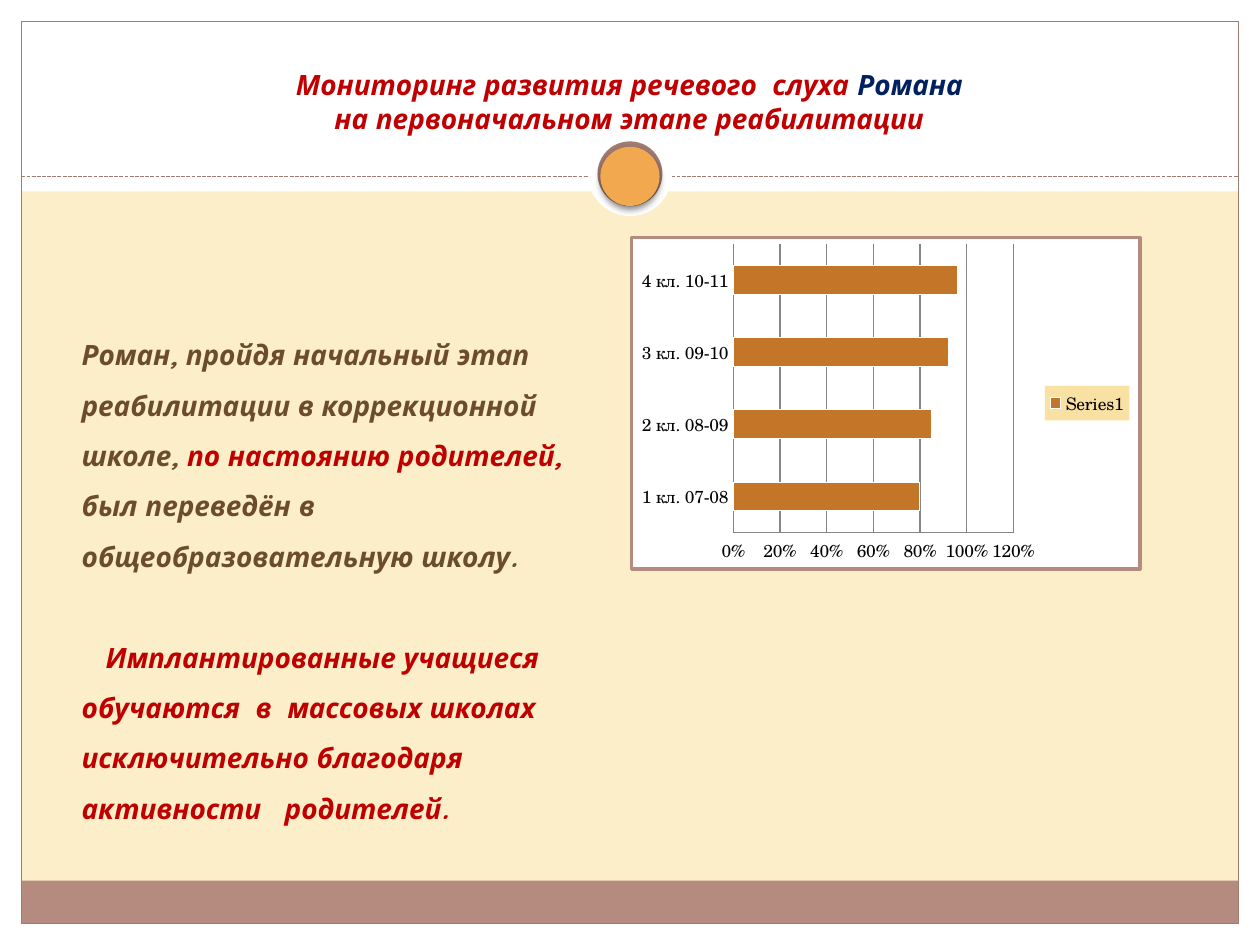
from lxml import etree
from pptx import Presentation, util as u
from pptx.chart.data import CategoryChartData
from pptx.dml.color import RGBColor
from pptx.enum import chart as charts, dml, shapes, text
from pptx.oxml import parse_xml
from pptx.oxml.ns import nsdecls, qn

WIDTH, HEIGHT, MARGIN = 10, 7.5, 0.17
FOOTER_TOP = 6.99
CENTRE = WIDTH / 2
WHITE = RGBColor(0xFF, 0xFF, 0xFF)
CREAM = RGBColor(0xFB, 0xEE, 0xC9)
ROSE = RGBColor(0xB5, 0x8B, 0x80)
MAUVE = RGBColor(0xA0, 0x7B, 0x71)
ORANGE = RGBColor(0xF1, 0xA8, 0x4F)
RUST = RGBColor(0xC3, 0x76, 0x28)
SAND = RGBColor(0xF9, 0xE1, 0xA3)
GREY = RGBColor(0x86, 0x86, 0x86)
BLACK = RGBColor(0, 0, 0)
RED = RGBColor(0xC0, 0, 0)
NAVY = RGBColor(0, 0x20, 0x60)
BROWN = RGBColor(0x6C, 0x4C, 0x2C)
SERIES_NAME = "Series1"
SCORES = {"1 кл. 07-08": 0.8, "2 кл. 08-09": 0.85, "3 кл. 09-10": 0.92, "4 кл. 10-11": 0.96}


def inches(*lengths):
    """Turn plain numbers into slide lengths."""
    return [u.Inches(length) for length in lengths]


def add_block(page, kind, area, fill=None, line=None, weight=0.75):
    """Draw a preset shape without shadow."""
    block = page.shapes.add_shape(kind, *inches(*area))
    block.shadow.inherit = False
    if fill is None:
        block.fill.background()
    else:
        block.fill.solid()
        block.fill.fore_color.rgb = fill
    if line is None:
        block.line.fill.background()
    else:
        block.line.color.rgb = line
        block.line.width = u.Pt(weight)
    return block


def add_circle(page, middle, size, **style):
    """Draw a circle on the vertical centre line of the slide."""
    area = (CENTRE - size / 2, middle - size / 2, size, size)
    return add_block(page, shapes.MSO_SHAPE.OVAL, area, **style)


def add_divider(page, height):
    """Draw the dashed line below the title."""
    line = page.shapes.add_connector(
        shapes.MSO_CONNECTOR.STRAIGHT, *inches(MARGIN, height, WIDTH - MARGIN, height))
    line.line.color.rgb = MAUVE
    line.line.width = u.Pt(0.75)
    line.line.dash_style = dml.MSO_LINE.SQUARE_DOT
    etree.SubElement(line._element.spPr, qn("a:effectLst"))


def add_shadow(shape):
    """Give a shape a soft shadow straight below it."""
    effects = shape._element.spPr.find(qn("a:effectLst"))
    effects.append(parse_xml(
        f'<a:outerShdw {nsdecls("a")} blurRad="{u.Pt(4)}" dist="{u.Pt(2)}" dir="5400000">'
        '<a:srgbClr val="000000"><a:alpha val="45000"/></a:srgbClr></a:outerShdw>'))


def add_text(page, area, paragraphs, align=text.PP_ALIGN.LEFT,
             anchor=text.MSO_ANCHOR.TOP, spacing=1.0, gap=0, indent=0):
    """Write coloured spans; gap and indent apply after the first paragraph."""
    box = page.shapes.add_textbox(*inches(*area))
    frame = box.text_frame
    frame.word_wrap = True
    frame.vertical_anchor = anchor
    for number, spans in enumerate(paragraphs):
        para = frame.add_paragraph() if number else frame.paragraphs[0]
        para.alignment = align
        para.line_spacing = spacing
        if number:
            para.space_before = u.Pt(gap)
            para._p.get_or_add_pPr().set("indent", str(u.Inches(indent)))
        for words, colour in spans:
            span = para.add_run()
            span.text = words
            span.font.name = "Quicksand"
            span.font.size = u.Pt(16)
            span.font.bold = span.font.italic = True
            span.font.color.rgb = colour
    return box


def add_scores_chart(page, area):
    """Plot the hearing scores by school year."""
    data = CategoryChartData(number_format="0%")
    data.categories = list(SCORES)
    data.add_series(SERIES_NAME, list(SCORES.values()))
    chart = page.shapes.add_chart(
        charts.XL_CHART_TYPE.BAR_STACKED, *inches(*area), data).chart
    chart.has_title = False
    chart.font.name = "TeX Gyre Schola"
    chart.font.size = u.Pt(10)
    chart.font.color.rgb = BLACK
    plot = chart.plots[0]
    plot.gap_width, plot.overlap = 150, 100
    plot.vary_by_categories = False
    bars = plot.series[0].format
    bars.fill.solid()
    bars.fill.fore_color.rgb = RUST
    bars.line.color.rgb = WHITE
    values = chart.value_axis
    values.minimum_scale, values.maximum_scale, values.major_unit = 0, 1.2, 0.2
    values.tick_labels.number_format = "0%"
    values.tick_labels.number_format_is_linked = False
    values.major_gridlines.format.line.color.rgb = GREY
    for axis in (values, chart.category_axis):
        axis.major_tick_mark = charts.XL_TICK_MARK.NONE
        axis.format.line.color.rgb = GREY
    chart.has_legend = True
    chart.legend.position = charts.XL_LEGEND_POSITION.RIGHT
    chart.legend.include_in_layout = False
    chart.legend._element.get_or_add_txPr().addprevious(parse_xml(
        f'<c:spPr {nsdecls("c", "a")}><a:solidFill><a:srgbClr val="{SAND}"/></a:solidFill></c:spPr>'))
    chart._chartSpace.chart.addnext(parse_xml(
        f'<c:spPr {nsdecls("c", "a")}><a:solidFill><a:srgbClr val="{WHITE}"/></a:solidFill>'
        f'<a:ln w="{u.Pt(2)}"><a:solidFill><a:srgbClr val="{ROSE}"/></a:solidFill></a:ln></c:spPr>'))


def add_backdrop(page):
    """Draw the white margins, footer band, frame and divider."""
    page.background.fill.solid()
    page.background.fill.fore_color.rgb = CREAM
    bottom, right = HEIGHT - MARGIN, WIDTH - MARGIN
    inner = WIDTH - 2 * MARGIN
    rectangle = shapes.MSO_SHAPE.RECTANGLE
    for area in ((0, bottom, WIDTH, MARGIN), (0, 0, WIDTH, 1.52),
                 (0, 0, MARGIN, HEIGHT), (right, 0, MARGIN, HEIGHT)):
        add_block(page, rectangle, area, fill=WHITE)
    add_block(page, rectangle, (MARGIN, FOOTER_TOP, inner, bottom - FOOTER_TOP), fill=ROSE)
    add_block(page, rectangle, (MARGIN, MARGIN, inner, HEIGHT - 2 * MARGIN), line=MAUVE)
    add_divider(page, 1.4)
    add_circle(page, 1.38, 0.67, fill=WHITE)
    add_circle(page, 1.38, 0.46, fill=WHITE, line=MAUVE, weight=4)


def main():
    """Build the slide and save it."""
    deck = Presentation()
    deck.slide_width, deck.slide_height = inches(WIDTH, HEIGHT)
    page = deck.slides.add_slide(deck.slide_layouts[6])
    add_backdrop(page)
    add_text(page, (0.33, 0, 9.33, 1.12), [
        [("Мониторинг развития речевого  слуха ", RED), ("Романа", NAVY)],
        [("на первоначальном этапе реабилитации", RED)],
    ], align=text.PP_ALIGN.CENTER, anchor=text.MSO_ANCHOR.BOTTOM)
    add_scores_chart(page, (5, 1.87, 4.06, 2.66))
    add_shadow(add_circle(page, 1.4, 0.47, fill=ORANGE))
    add_text(page, (0.55, 2.5, 4.14, 4.41), [
        [("Роман, пройдя начальный этап реабилитации в коррекционной школе, ", BROWN),
         ("по настоянию родителей,", RED),
         (" был переведён в общеобразовательную школу.", BROWN)],
        [("Имплантированные учащиеся обучаются  в  массовых школах исключительно "
          "благодаря  активности   родителей.", RED)],
    ], spacing=1.5, gap=28.8, indent=0.19)
    deck.save("out.pptx")


if __name__ == "__main__":
    main()
